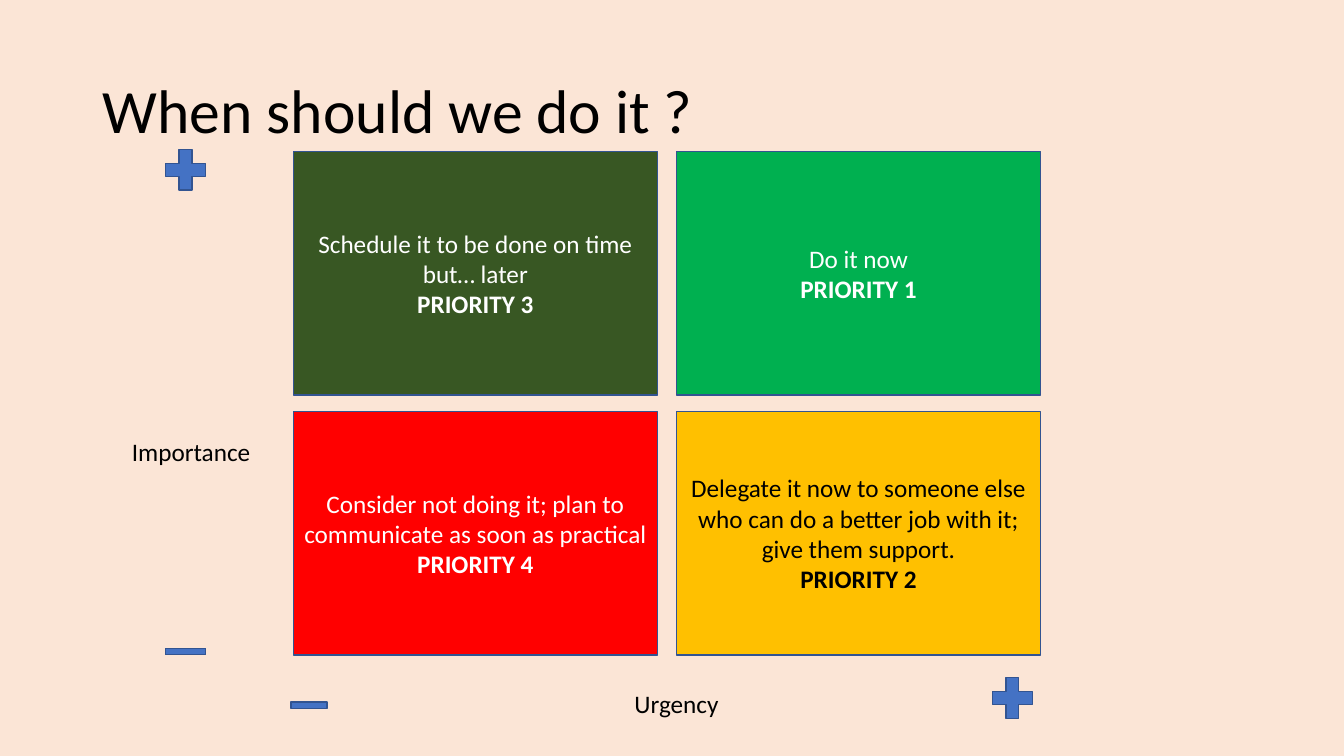
import pptx
import pptx.util
import pptx.dml.color
import pptx.enum.shapes
import pptx.enum.text

Shape = pptx.enum.shapes.MSO_SHAPE
Align = pptx.enum.text.PP_ALIGN
Anchor = pptx.enum.text.MSO_ANCHOR
COLORS = {
    "page": "FBE5D6", "edge": "325491", "sign": "4472C4",
    "pine": "385723", "green": "00B050", "red": "FF0000", "gold": "FFC000",
    "white": "FFFFFF", "black": "000000",
}


class Board:
    """Draws styled elements on one slide, with 100 px to the inch."""

    def __init__(self, deck):
        self.font = "Calibri"
        self.slide = deck.slides.add_slide(deck.slide_layouts[5])
        self.paint(self.slide.background.fill, "page")

    def px(self, *sizes):
        return [pptx.util.Emu(size * 9144) for size in sizes]

    def tint(self, name):
        return pptx.dml.color.RGBColor.from_string(COLORS[name])

    def paint(self, fill, name):
        fill.solid()
        fill.fore_color.rgb = self.tint(name)

    def letter(self, frame, lines, color, size=18, align=Align.CENTER):
        frame.word_wrap = True
        frame.text = "\n".join(lines)
        for para in frame.paragraphs:
            para.alignment = align
            para.font.name = self.font
            para.font.size = pptx.util.Pt(size)
            para.font.color.rgb = self.tint(color)

    def title(self, text, *area):
        head = self.slide.shapes.title
        head.left, head.top, head.width, head.height = self.px(*area)
        frame = head.text_frame
        self.letter(frame, [text], "black", 44, Align.LEFT)
        frame.vertical_anchor = Anchor.MIDDLE
        frame.paragraphs[0].line_spacing = 0.9

    def shape(self, kind, fill, *area):
        item = self.slide.shapes.add_shape(kind, *self.px(*area))
        item.shadow.inherit = False
        self.paint(item.fill, fill)
        item.line.color.rgb = self.tint("edge")
        item.line.width = pptx.util.Pt(1)
        return item

    def card(self, advice, rank, fill, color, *area):
        frame = self.shape(Shape.RECTANGLE, fill, *area).text_frame
        self.letter(frame, [advice, f"PRIORITY {rank}"], color)
        frame.vertical_anchor = Anchor.MIDDLE
        frame.paragraphs[1].font.bold = True

    def label(self, text, *area):
        box = self.slide.shapes.add_textbox(*self.px(*area))
        self.letter(box.text_frame, [text], "black")


def main():
    deck = pptx.Presentation()
    deck.slide_width = pptx.util.Inches(13.33)
    deck.slide_height = pptx.util.Inches(7.5)
    board = Board(deck)
    board.title("When should we do it ?", 92, 40, 1150, 145)

    cards = [
        ("Schedule it to be done on time but… later", 3, "pine", "white"),
        ("Do it now", 1, "green", "white"),
        ("Consider not doing it; plan to communicate as soon as practical",
         4, "red", "white"),
        ("Delegate it now to someone else who can do a better job with it; "
         "give them support.", 2, "gold", "black"),
    ]
    for i, card in enumerate(cards):
        row, col = divmod(i, 2)
        board.card(*card, 291 + col * 380, 150 + row * 258, 361, 242)

    board.label("Importance", 120, 428, 139, 40)
    board.label("Urgency", 608, 678, 126, 40)
    for left, top in [(157, 141), (977, 665)]:
        board.shape(Shape.MATH_PLUS, "sign", left, top, 54, 55)
    for left, top, width in [(157, 633, 54), (282, 686, 49)]:
        board.shape(Shape.MATH_MINUS, "sign", left, top, width, 27)
    deck.save("out.pptx")


if __name__ == "__main__":
    main()
